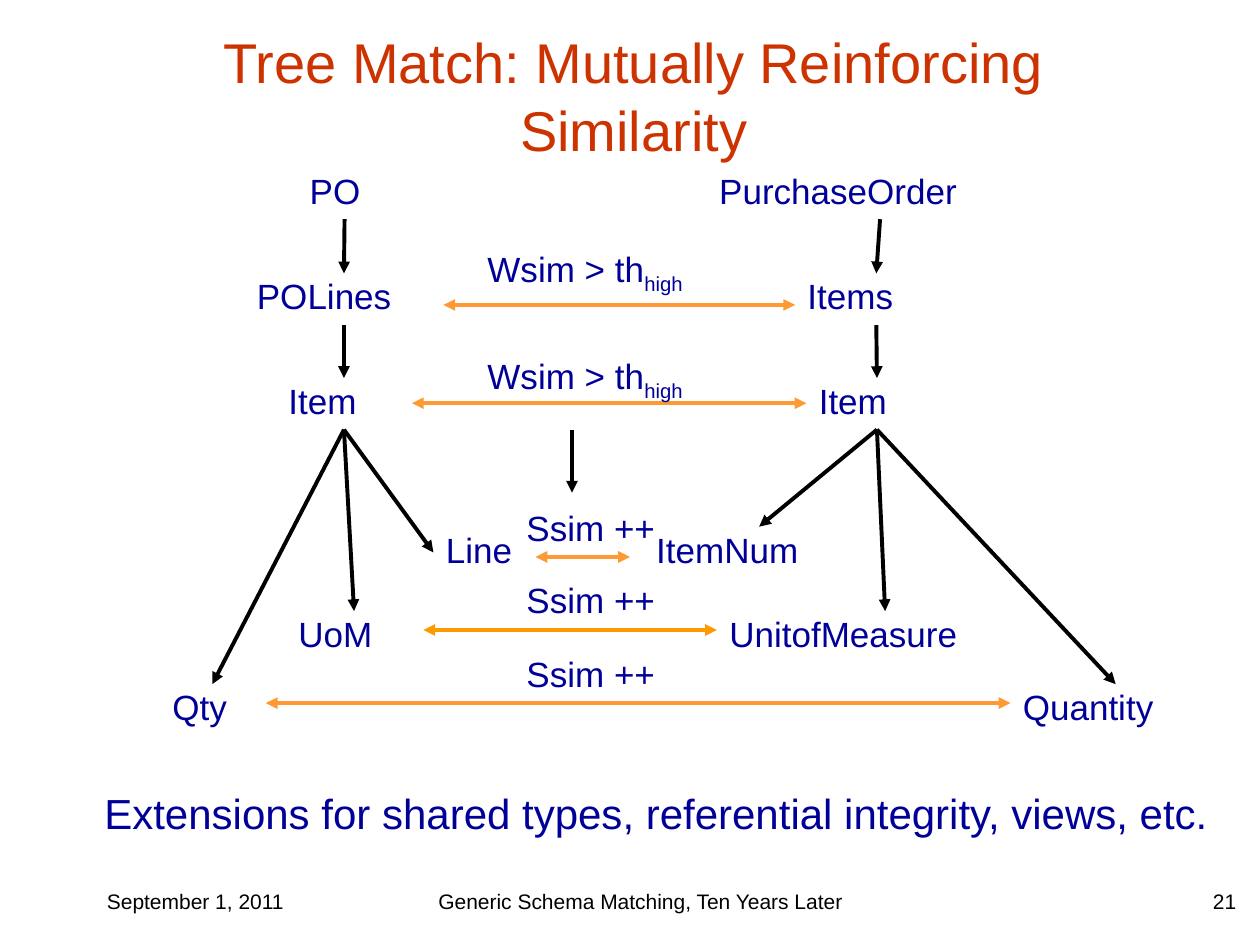
from typing import NamedTuple

from lxml import etree
from pptx import Presentation
from pptx.dml.color import RGBColor
from pptx.enum.shapes import MSO_CONNECTOR
from pptx.enum.text import MSO_ANCHOR, MSO_AUTO_SIZE, PP_ALIGN
from pptx.oxml.ns import qn
from pptx.util import Inches, Pt

STRAIGHT = MSO_CONNECTOR.STRAIGHT
LEFT, CENTER, RIGHT = PP_ALIGN.LEFT, PP_ALIGN.CENTER, PP_ALIGN.RIGHT
TOP, MIDDLE = MSO_ANCHOR.TOP, MSO_ANCHOR.MIDDLE
GROW, FIXED = MSO_AUTO_SIZE.SHAPE_TO_FIT_TEXT, MSO_AUTO_SIZE.NONE
TOP_SIDE, LEFT_SIDE, BOTTOM_SIDE = 0, 1, 2

BLACK = RGBColor(0x00, 0x00, 0x00)
NAVY = RGBColor(0x00, 0x00, 0x99)
RED = RGBColor(0xCC, 0x33, 0x00)
ORANGE = RGBColor(0xFF, 0x99, 0x33)
AMBER = RGBColor(0xFF, 0x99, 0x00)

FONT = "Arial"
LABEL_HEIGHT = 0.41
ROOT_Y, LIST_Y, ITEM_Y, LINE_Y, UNIT_Y, QUANTITY_Y = 1.33, 2.17, 3, 4.18, 4.85, 5.43


class Node(NamedTuple):
    key: str
    text: str
    left: float
    top: float
    width: float


class Edge(NamedTuple):
    parent: str
    child: str
    side: int = TOP_SIDE


class Match(NamedTuple):
    left: float
    right: float
    y: float
    color: RGBColor = ORANGE


class Note(NamedTuple):
    text: str
    left: float
    top: float
    width: float
    subscript: str = ""


NODES = [
    Node("po", "PO", 2.36, ROOT_Y, 0.75),
    Node("po_lines", "POLines", 1.94, LIST_Y, 1.58),
    Node("po_item", "Item", 2.19, ITEM_Y, 1.08),
    Node("line", "Line", 3.44, LINE_Y, 0.92),
    Node("uom", "UoM", 2.27, UNIT_Y, 1.08),
    Node("qty", "Qty", 1.27, QUANTITY_Y, 0.83),
    Node("order", "PurchaseOrder", 5.61, ROOT_Y, 2.75),
    Node("items", "Items", 6.31, LIST_Y, 1.29),
    Node("order_item", "Item", 6.4, ITEM_Y, 1.12),
    Node("item_num", "ItemNum", 5.11, LINE_Y, 1.83),
    Node("unit", "UnitofMeasure", 5.69, UNIT_Y, 2.67),
    Node("quantity", "Quantity", 8.02, QUANTITY_Y, 1.67),
]
EDGES = [
    Edge("po", "po_lines"),
    Edge("po_lines", "po_item"),
    Edge("po_item", "line", LEFT_SIDE),
    Edge("po_item", "uom"),
    Edge("po_item", "qty"),
    Edge("order", "items"),
    Edge("items", "order_item"),
    Edge("order_item", "item_num"),
    Edge("order_item", "unit"),
    Edge("order_item", "quantity"),
]
MATCHES = [
    Match(3.52, 6.31, 2.42),
    Match(3.27, 6.4, 3.2),
    Match(4.25, 5, 4.42),
    Match(3.36, 5.69, 5, AMBER),
    Match(2.11, 8.02, 5.58),
]
NOTES = [Note("Wsim > th", 3.77, y, 1.81, "high") for y in (1.92, 2.77)] + [
    Note("Ssim ++", 4.08, y, 1.23) for y in (4.01, 4.58, 5.17)
]


def add_text(slide, text: str, left: float, top: float, width: float,
             height: float = LABEL_HEIGHT, *, size: float = 20,
             color: RGBColor = NAVY, align=LEFT, anchor=TOP, wrap: bool = True,
             label: bool = True, subscript: str = ""):
    """Add a text box; labels have tight lines and grow with their text."""
    box = slide.shapes.add_textbox(Inches(left), Inches(top), Inches(width), Inches(height))
    frame = box.text_frame
    frame.word_wrap = wrap
    frame.auto_size = GROW if label else FIXED
    frame.vertical_anchor = anchor
    paragraph = frame.paragraphs[0]
    paragraph.alignment = align
    if label:
        paragraph.line_spacing = 0.9
        paragraph.space_before = Pt(size * 0.2)
    for part in filter(None, (text, subscript)):
        run = paragraph.add_run()
        run.text = part
        run.font.name = FONT
        run.font.size = Pt(size)
        run.font.color.rgb = color
    if subscript:
        run.font._element.set("baseline", "-25000")
    return box


def add_arrow(slide, start: tuple[float, float] = (0, 0), end: tuple[float, float] = (0, 0),
              color: RGBColor = BLACK, both_ways: bool = False):
    """Add a straight arrow with a triangle at its end or at both ends."""
    arrow = slide.shapes.add_connector(STRAIGHT, *map(Inches, (*start, *end)))
    arrow.line.color.rgb = color
    arrow.line.width = Pt(2.25)
    outline = arrow.line._get_or_add_ln()
    for tag in ("a:headEnd", "a:tailEnd") if both_ways else ("a:tailEnd",):
        etree.SubElement(outline, qn(tag), type="triangle")
    etree.SubElement(arrow._element.spPr, qn("a:effectLst"))
    return arrow


def add_trees(slide, nodes: list[Node], edges: list[Edge]) -> None:
    """Draw the schema nodes and join each parent to its children."""
    labels = {node.key: add_text(slide, node.text, node.left, node.top, node.width)
              for node in nodes}
    for edge in edges:
        arrow = add_arrow(slide)
        arrow.begin_connect(labels[edge.parent], BOTTOM_SIDE)
        arrow.end_connect(labels[edge.child], edge.side)


def main() -> None:
    """Build the tree match slide."""
    deck = Presentation()
    deck.slide_width, deck.slide_height = Inches(10), Inches(7.5)
    slide = deck.slides.add_slide(deck.slide_layouts[6])

    footer = {"size": 12, "color": BLACK, "label": False}
    add_text(slide, "September 1, 2011", 0.75, 7, 2.08, 0.5, **footer)
    add_text(slide, "Generic Schema Matching, Ten Years Later", 3.17, 7, 3.83, 0.5,
             align=CENTER, **footer)
    add_text(slide, "21", 7.83, 7, 2.08, 0.5, align=RIGHT, **footer)
    add_text(slide, "Tree Match: Mutually Reinforcing Similarity", 0.82, 0.17, 8.42, 1.17,
             size=32, color=RED, align=CENTER, anchor=MIDDLE, label=False)

    add_trees(slide, NODES, EDGES)
    for match in MATCHES:
        add_arrow(slide, (match.left, match.y), (match.right, match.y), match.color, True)
    for note in NOTES:
        add_text(slide, note.text, note.left, note.top, note.width,
                 wrap=False, subscript=note.subscript)
    add_arrow(slide, (4.54, 3.41), (4.54, 3.91))
    add_text(slide, "Extensions for shared types, referential integrity, views, etc.",
             0.73, 6.25, 9.04, 0.47, size=24, wrap=False)
    deck.save("out.pptx")


if __name__ == "__main__":
    main()
